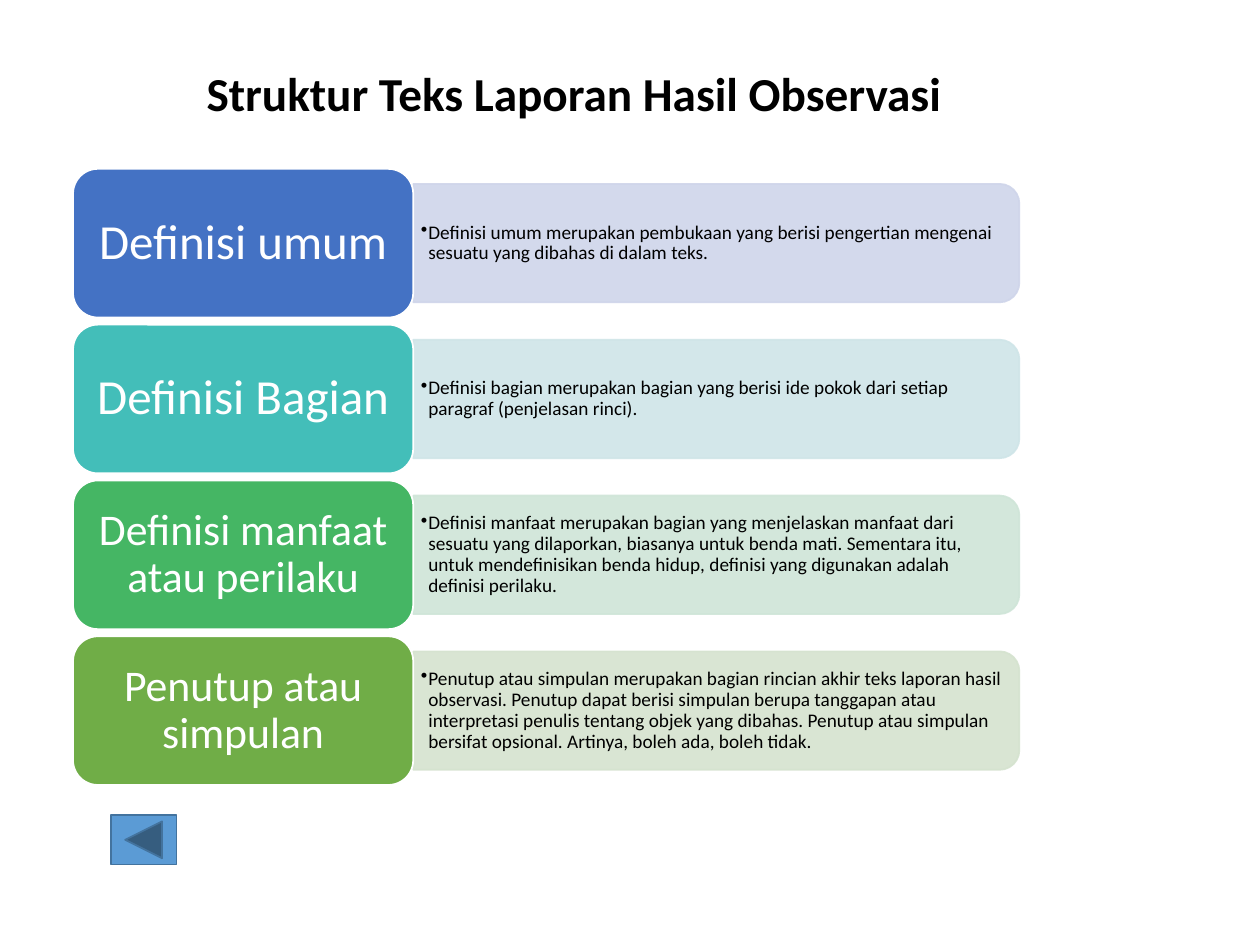
from dataclasses import dataclass

from lxml.etree import SubElement
from pptx import Presentation
from pptx.dml.color import RGBColor
from pptx.enum.shapes import MSO_SHAPE as Preset
from pptx.enum.text import MSO_ANCHOR as Anchor, MSO_AUTO_SIZE as AutoSize, PP_ALIGN as Align
from pptx.oxml.ns import qn
from pptx.util import Inches, Pt

FONT = "Calibri"
WHITE = RGBColor(0xFF, 0xFF, 0xFF)
BLACK = RGBColor(0x00, 0x00, 0x00)
BLUE = RGBColor(0x44, 0x72, 0xC4)
PALE_BLUE = RGBColor(0xCF, 0xD5, 0xEA)
TEAL = RGBColor(0x43, 0xBE, 0xB9)
PALE_TEAL = RGBColor(0xCF, 0xE5, 0xE8)
GREEN = RGBColor(0x45, 0xB6, 0x64)
PALE_GREEN = RGBColor(0xCF, 0xE5, 0xD8)
OLIVE = RGBColor(0x70, 0xAD, 0x47)
PALE_OLIVE = RGBColor(0xD5, 0xE3, 0xCF)
BUTTON_BLUE = RGBColor(0x5B, 0x9B, 0xD5)
BUTTON_EDGE = RGBColor(0x43, 0x73, 0x9E)

FIRST_TOP, LAST_TOP = 1.34, 5.05
LABEL_LEFT, LABEL_WIDTH, LABEL_HEIGHT = 0.58, 2.7, 1.18
PANEL_LEFT, PANEL_WIDTH, PANEL_HEIGHT = 3.28, 4.81, 0.94
TEXT_LEFT, TEXT_WIDTH, TEXT_HEIGHT = 3.29, 4.76, 0.85


@dataclass
class Section:
    label: str
    label_size: int
    description: str
    color: RGBColor
    pale: RGBColor


SECTIONS = [
    Section("Definisi umum", 28,
            "Definisi umum merupakan pembukaan yang berisi pengertian mengenai "
            "sesuatu yang dibahas di dalam teks.", BLUE, PALE_BLUE),
    Section("Definisi Bagian", 28,
            "Definisi bagian merupakan bagian yang berisi ide pokok dari setiap "
            "paragraf (penjelasan rinci).", TEAL, PALE_TEAL),
    Section("Definisi manfaat atau perilaku", 25,
            "Definisi manfaat merupakan bagian yang menjelaskan manfaat dari sesuatu "
            "yang dilaporkan, biasanya untuk benda mati. Sementara itu, untuk "
            "mendefinisikan benda hidup, definisi yang digunakan adalah definisi "
            "perilaku.", GREEN, PALE_GREEN),
    Section("Penutup atau simpulan", 25,
            "Penutup atau simpulan merupakan bagian rincian akhir teks laporan hasil "
            "observasi. Penutup dapat berisi simpulan berupa tanggapan atau "
            "interpretasi penulis tentang objek yang dibahas. Penutup atau simpulan "
            "bersifat opsional. Artinya, boleh ada, boleh tidak.", OLIVE, PALE_OLIVE),
]


def add_preset(slide, preset, left: float, top: float, width: float, height: float,
               fill: RGBColor, line: RGBColor):
    shape = slide.shapes.add_shape(
        preset, Inches(left), Inches(top), Inches(width), Inches(height))
    shape.shadow.inherit = False
    shape.fill.solid()
    shape.fill.fore_color.rgb = fill
    shape.line.color.rgb = line
    shape.line.width = Pt(1)
    return shape


def set_margins(frame, side: float, end: float) -> None:
    frame.word_wrap = True
    frame.margin_left = frame.margin_right = Inches(side)
    frame.margin_top = frame.margin_bottom = Inches(end)


def style(paragraph, size: int, color: RGBColor, bold: bool = False) -> None:
    paragraph.font.name = FONT
    paragraph.font.size = Pt(size)
    paragraph.font.bold = bold
    paragraph.font.color.rgb = color


def add_panel(slide, middle: float, color: RGBColor) -> None:
    center = PANEL_LEFT + PANEL_WIDTH / 2
    panel = add_preset(slide, Preset.ROUND_2_SAME_RECTANGLE,
                       center - PANEL_HEIGHT / 2, middle - PANEL_WIDTH / 2,
                       PANEL_HEIGHT, PANEL_WIDTH, color, color)
    panel.rotation = 90
    for tint in panel.element.spPr.iter(qn("a:srgbClr")):
        SubElement(tint, qn("a:alpha"), val="90000")


def add_description(slide, middle: float, text: str) -> None:
    box = slide.shapes.add_textbox(Inches(TEXT_LEFT), Inches(middle - TEXT_HEIGHT / 2),
                                   Inches(TEXT_WIDTH), Inches(TEXT_HEIGHT))
    frame = box.text_frame
    set_margins(frame, 0.05, 0.02)
    frame.vertical_anchor = Anchor.MIDDLE
    paragraph = frame.paragraphs[0]
    paragraph.text = text
    paragraph.level = 1
    paragraph.line_spacing = 0.9
    properties = paragraph._p.get_or_add_pPr()
    properties.set("marL", str(Inches(0.06)))
    properties.set("indent", str(-Inches(0.06)))
    SubElement(properties, qn("a:buChar"), char="•")
    style(paragraph, 11, BLACK)


def add_label(slide, top: float, section: Section) -> None:
    label = add_preset(slide, Preset.ROUNDED_RECTANGLE, LABEL_LEFT, top,
                       LABEL_WIDTH, LABEL_HEIGHT, section.color, WHITE)
    frame = label.text_frame
    set_margins(frame, 0.12, 0.06)
    frame.vertical_anchor = Anchor.MIDDLE
    paragraph = frame.paragraphs[0]
    paragraph.text = section.label
    paragraph.alignment = Align.CENTER
    paragraph.line_spacing = 0.9
    style(paragraph, section.label_size, WHITE)


def add_title(slide, text: str) -> None:
    title = slide.shapes.title
    title.left, title.top = Inches(1.39), Inches(0.47)
    title.width, title.height = Inches(6.33), Inches(0.56)
    frame = title.text_frame
    set_margins(frame, 0.09, 0.04)
    frame.auto_size = AutoSize.NONE
    frame.vertical_anchor = Anchor.TOP
    paragraph = frame.paragraphs[0]
    paragraph.text = text
    paragraph.alignment = Align.CENTER
    style(paragraph, 27, BLACK, bold=True)


def main() -> None:
    deck = Presentation()
    deck.slide_width, deck.slide_height = Inches(10), Inches(7.5)
    slide = deck.slides.add_slide(deck.slide_layouts[5])
    add_title(slide, "Struktur Teks Laporan Hasil Observasi")
    pitch = (LAST_TOP - FIRST_TOP) / (len(SECTIONS) - 1)
    for row, section in enumerate(SECTIONS):
        top = FIRST_TOP + row * pitch
        middle = top + LABEL_HEIGHT / 2
        add_panel(slide, middle, section.pale)
        add_description(slide, middle, section.description)
        add_label(slide, top, section)
    add_preset(slide, Preset.ACTION_BUTTON_BACK_OR_PREVIOUS, 0.88, 6.47, 0.52, 0.39,
               BUTTON_BLUE, BUTTON_EDGE)
    deck.save("out.pptx")


if __name__ == "__main__":
    main()
